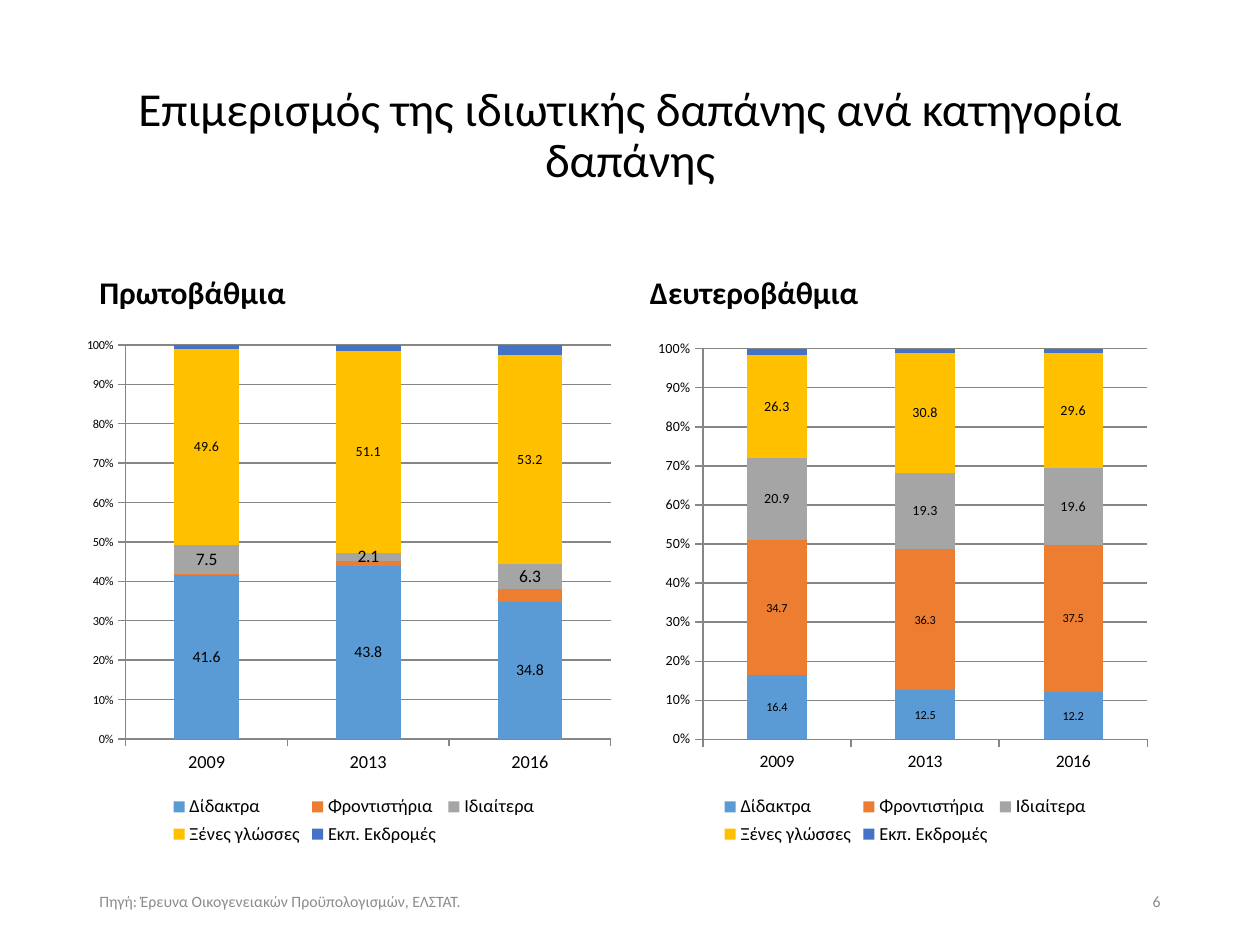
import pptx
import pptx.chart.data
import pptx.dml.color
import pptx.enum.chart
import pptx.enum.text
import pptx.oxml
import pptx.util
from pptx.util import Inches

FONT = "Calibri"
COLORS = {"text": "000000", "footer": "8C8C8C", "grid": "868686"}
YEARS = ["2009", "2013", "2016"]
CATEGORIES = [
    ("Δίδακτρα", "5B9BD5"),
    ("Φροντιστήρια", "ED7D31"),
    ("Ιδιαίτερα", "A5A5A5"),
    ("Ξένες γλώσσες", "FFC000"),
    ("Εκπ. Εκδρομές", "4472C4"),
]
TEXTS = [
    {"text": "Επιμερισμός της ιδιωτικής δαπάνης ανά κατηγορία δαπάνης",
     "at": (0.69, 0.67, 8.62, 0.83), "size": 27, "align": "CENTER", "spacing": 0.9},
    {"text": "Πρωτοβάθμια", "at": (0.69, 2.12, 4.23, 0.4), "size": 18,
     "bold": True, "anchor": "BOTTOM", "spacing": 0.9},
    {"text": "Δευτεροβάθμια", "at": (5.06, 2.12, 4.25, 0.4), "size": 18,
     "bold": True, "anchor": "BOTTOM", "spacing": 0.9},
    {"text": "Πηγή: Έρευνα Οικογενειακών Προϋπολογισμών, ΕΛΣΤΑΤ.",
     "at": (0.69, 6.95, 3.48, 0.4), "size": 9, "color": "footer"},
    {"text": "6", "at": (7.06, 6.95, 2.25, 0.4), "size": 9,
     "color": "footer", "align": "RIGHT"},
]
EDUCATION_LEVELS = [
    {"at": (0.69, 2.58, 4.23, 4.17), "plot": (0.071, 0.038, 0.912, 0.75),
     "year_size": 10.5, "percent_size": 7, "label_sizes": (9, None, 10, 8, None),
     "shares": [(41.6, 43.8, 34.8), (0.3, 1.4, 3.2), (7.5, 2.1, 6.3),
                (49.6, 51.1, 53.2), (1.1, 1.6, 2.5)]},
    {"at": (5.06, 2.67, 4.25, 4.08), "plot": (0.122, 0.024, 0.83, 0.76),
     "year_size": 10, "percent_size": 8, "label_sizes": (7, 7, 8, 8, None),
     "shares": [(16.4, 12.5, 12.2), (34.7, 36.3, 37.5), (20.9, 19.3, 19.6),
                (26.3, 30.8, 29.6), (1.7, 1.1, 1.0)]},
]


def rgb(value):
    return pptx.dml.color.RGBColor.from_string(value)


def style_font(font, size, color="text", bold=False):
    font.name = FONT
    font.size = pptx.util.Pt(size)
    font.bold = bold
    font.color.rgb = rgb(COLORS[color])


def add_text(slide, entry):
    frame = slide.shapes.add_textbox(*map(Inches, entry["at"])).text_frame
    frame.word_wrap = True
    frame.vertical_anchor = pptx.enum.text.MSO_ANCHOR[entry.get("anchor", "MIDDLE")]
    frame.text = entry["text"]
    paragraph = frame.paragraphs[0]
    paragraph.alignment = pptx.enum.text.PP_ALIGN[entry.get("align", "LEFT")]
    paragraph.line_spacing = entry.get("spacing", 1.0)
    style_font(paragraph.runs[0].font, entry["size"],
               entry.get("color", "text"), entry.get("bold", False))


def place_plot(chart, plot):
    plot_area = chart._chartSpace.chart.plotArea
    for layout in plot_area.findall(pptx.oxml.ns.qn("c:layout")):
        plot_area.remove(layout)
    sides = "".join(f'<c:{side} val="{share}"/>' for side, share in zip("xywh", plot))
    plot_area.insert(0, pptx.oxml.parse_xml(
        f'<c:layout {pptx.oxml.ns.nsdecls("c")}><c:manualLayout>'
        '<c:layoutTarget val="inner"/><c:xMode val="edge"/><c:yMode val="edge"/>'
        f'{sides}</c:manualLayout></c:layout>'))


def add_spending_chart(slide, level):
    data = pptx.chart.data.CategoryChartData(number_format="0.0")
    data.categories = YEARS
    for (name, _), shares in zip(CATEGORIES, level["shares"]):
        data.add_series(name, shares)
    chart = slide.shapes.add_chart(
        pptx.enum.chart.XL_CHART_TYPE.COLUMN_STACKED_100,
        *map(Inches, level["at"]), data).chart
    chart.has_title = False
    style_font(chart.font, 10)
    place_plot(chart, level["plot"])

    chart.has_legend = True
    chart.legend.position = pptx.enum.chart.XL_LEGEND_POSITION.BOTTOM
    chart.legend.include_in_layout = False
    style_font(chart.legend.font, 10.5)

    percent_axis = chart.value_axis
    percent_axis.maximum_scale = 1
    percent_axis.major_unit = 0.1
    percent_axis.tick_labels.number_format = "0%"
    percent_axis.tick_labels.number_format_is_linked = False
    percent_axis.major_gridlines.format.line.color.rgb = rgb(COLORS["grid"])
    for axis, size in ((chart.category_axis, level["year_size"]),
                       (percent_axis, level["percent_size"])):
        axis.major_tick_mark = pptx.enum.chart.XL_TICK_MARK.OUTSIDE
        axis.format.line.color.rgb = rgb(COLORS["grid"])
        style_font(axis.tick_labels.font, size)

    columns = chart.plots[0]
    columns.gap_width = 150
    columns.overlap = 100
    columns.vary_by_categories = False
    for series, (_, color), size in zip(columns.series, CATEGORIES, level["label_sizes"]):
        series.format.fill.solid()
        series.format.fill.fore_color.rgb = rgb(color)
        if size:
            labels = series.data_labels
            labels.show_value = True
            labels.number_format = "0.0"
            labels.number_format_is_linked = False
            style_font(labels.font, size)


def main():
    presentation = pptx.Presentation()
    presentation.slide_width = Inches(10)
    presentation.slide_height = Inches(7.5)
    slide = presentation.slides.add_slide(presentation.slide_layouts[6])
    for entry in TEXTS:
        add_text(slide, entry)
    for level in EDUCATION_LEVELS:
        add_spending_chart(slide, level)
    presentation.save("out.pptx")


if __name__ == "__main__":
    main()
